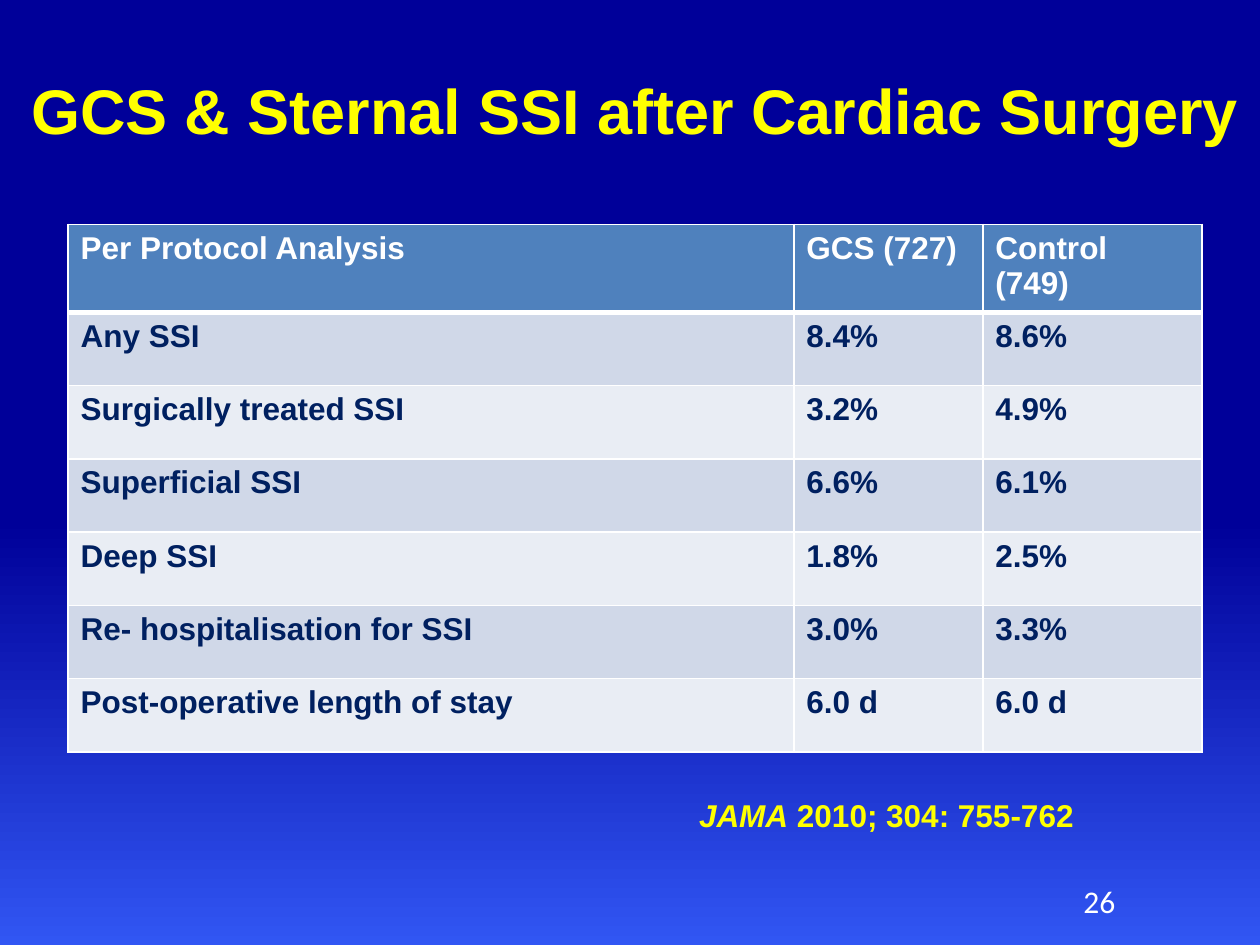
from lxml import etree
from pptx import Presentation
from pptx.dml.color import RGBColor
from pptx.enum.text import MSO_ANCHOR as Anchor, PP_ALIGN as Align
from pptx.oxml.ns import qn
from pptx.util import Inches, Pt

YELLOW = RGBColor(0xFF, 0xFF, 0x00)
WHITE = RGBColor(0xFF, 0xFF, 0xFF)
NAVY = RGBColor(0x00, 0x20, 0x60)
HEADER_BLUE = RGBColor(0x4F, 0x81, 0xBD)
BANDS = [RGBColor(0xD0, 0xD8, 0xE8), RGBColor(0xE9, 0xED, 0xF4)]
BACKGROUND = [(0.55, RGBColor(0x00, 0x00, 0x99)), (1, RGBColor(0x31, 0x56, 0xF3))]

# Content
TITLE = "GCS & Sternal SSI after Cardiac Surgery"
ROWS = [
    ("Per Protocol Analysis", "GCS (727)", "Control (749)"),
    ("Any SSI", "8.4%", "8.6%"),
    ("Surgically treated SSI", "3.2%", "4.9%"),
    ("Superficial SSI", "6.6%", "6.1%"),
    ("Deep SSI", "1.8%", "2.5%"),
    ("Re- hospitalisation for SSI", "3.0%", "3.3%"),
    ("Post-operative length of stay", "6.0 d", "6.0 d"),
]
COLUMN_WIDTHS = [5.76, 1.5, 1.74]
ROW_HEIGHT = 4.07 / len(ROWS)

# Text formats
TITLE_FONT = dict(name="Arial", size=Pt(36), bold=True)
BODY_FONT = dict(name="Arial", size=Pt(18), bold=True)
NUMBER_FONT = dict(name="Calibri", size=Pt(18))


def add_span(para, text, color, font):
    span = para.add_run()
    span.text = text
    span.font.color.rgb = color
    for key, value in font.items():
        setattr(span.font, key, value)


def add_box(page, place, align, anchor, color, spans):
    box = page.shapes.add_textbox(*map(Inches, place))
    frame = box.text_frame
    frame.word_wrap = True
    frame.vertical_anchor = anchor
    para = frame.paragraphs[0]
    para.alignment = align
    for text, font in spans:
        add_span(para, text, color, font)
    return box


def add_border(cell, side, points):
    line = etree.SubElement(cell._tc.get_or_add_tcPr(), qn(f"a:ln{side}"), w=str(Pt(points)))
    fill = etree.SubElement(line, qn("a:solidFill"))
    etree.SubElement(fill, qn("a:srgbClr"), val=str(WHITE))


deck = Presentation()
deck.slide_width, deck.slide_height = Inches(10), Inches(7.5)
page = deck.slides.add_slide(deck.slide_layouts[6])

# Background, shading from top to bottom
fill = page.background.fill
fill.gradient()
fill.gradient_angle = 270
for stop, (position, color) in zip(fill.gradient_stops, BACKGROUND):
    stop.position = position
    stop.color.rgb = color

# Title, raised above the middle of its box
title = add_box(page, (0.04, 0.47, 10, 1.34), Align.CENTER, Anchor.MIDDLE, YELLOW,
                [(TITLE, TITLE_FONT)])
title.text_frame.margin_bottom = Inches(0.6)

# Results table
table = page.shapes.add_table(len(ROWS), len(COLUMN_WIDTHS), Inches(0.54), Inches(1.78),
                              Inches(sum(COLUMN_WIDTHS)), Inches(4.07)).table
for column, width in zip(table.columns, COLUMN_WIDTHS):
    column.width = Inches(width)
for r, texts in enumerate(ROWS):
    table.rows[r].height = Inches(ROW_HEIGHT)
    borders = {"L": 1, "R": 1, "T": 3 if r == 1 else 1, "B": 3 if r == 0 else 1}
    for c, text in enumerate(texts):
        cell = table.cell(r, c)
        for side, points in borders.items():
            add_border(cell, side, points)
        cell.fill.solid()
        cell.fill.fore_color.rgb = BANDS[(r - 1) % 2] if r else HEADER_BLUE
        add_span(cell.text_frame.paragraphs[0], text, NAVY if r else WHITE, BODY_FONT)

# Citation and page number
add_box(page, (2.95, 6.27, 5.67, 0.4), Align.RIGHT, Anchor.TOP, YELLOW,
        [("JAMA", dict(BODY_FONT, italic=True)), (" 2010; 304: 755-762", BODY_FONT)])
add_box(page, (8.15, 6.95, 0.8, 0.4), Align.RIGHT, Anchor.MIDDLE, WHITE,
        [("26", NUMBER_FONT)])

deck.save("out.pptx")
